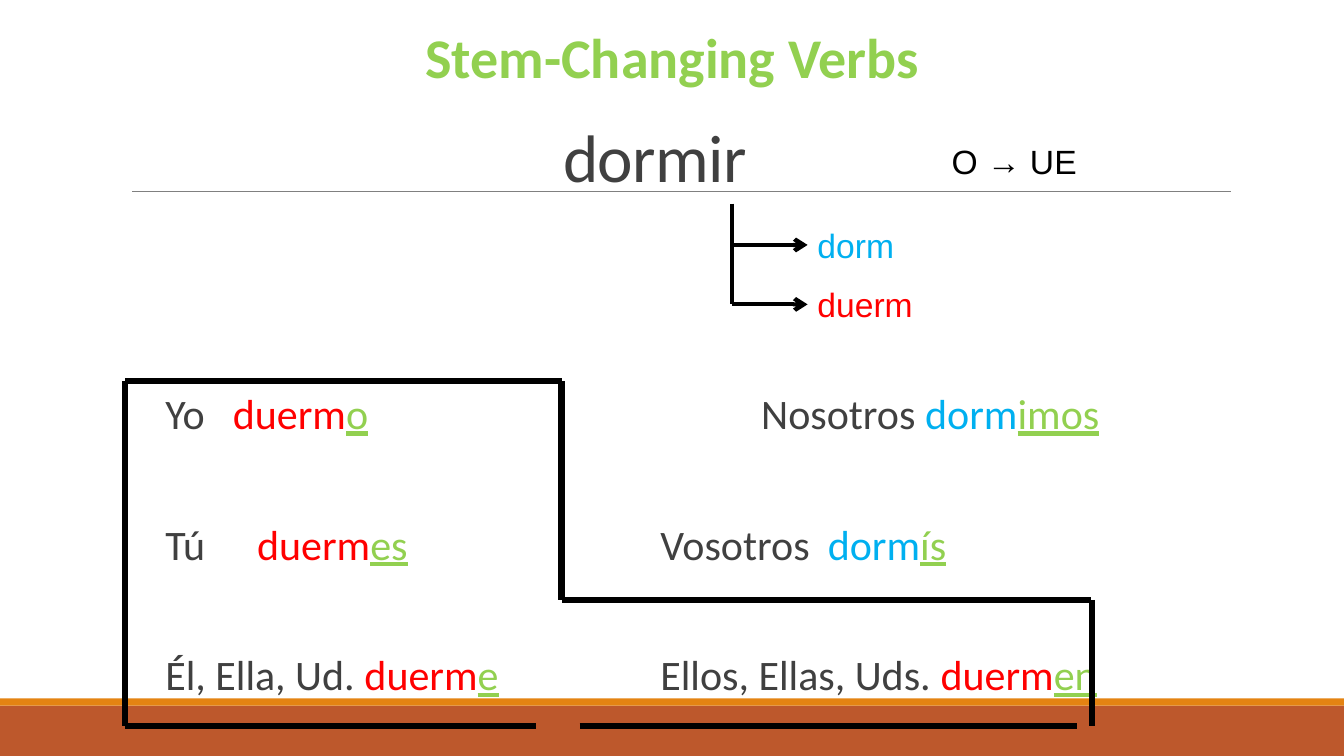
import pptx
import pptx.util
import pptx.dml.color
import pptx.enum.shapes
import pptx.enum.text
from dataclasses import dataclass
from lxml import etree

PX = 9144  # EMU in one px, 100 px to the inch
ALIGN = pptx.enum.text.PP_ALIGN
ANCHOR = pptx.enum.text.MSO_ANCHOR
KINDS = pptx.enum.shapes


@dataclass(frozen=True)
class Theme:
    black: str = "000000"
    grey: str = "404040"
    rule: str = "808080"
    red: str = "FF0000"
    blue: str = "00B0F0"
    green: str = "92D050"
    rust: str = "BD582C"
    amber: str = "E48312"
    head: str = "Calibri"
    note: str = "Arial"
    verb: int = 48
    title: int = 40
    body: int = 30
    small: int = 24


def tone(code):
    return pptx.dml.color.RGBColor.from_string(code)


def apply(thing, form):
    for name, value in form.items():
        setattr(thing, name, value)


class Page:
    def __init__(self, deck, theme):
        self.theme = theme
        self.slide = deck.slides.add_slide(deck.slide_layouts[6])
        self.shapes = self.slide.shapes

    def band(self, top, high, fill):
        box = self.shapes.add_shape(
            KINDS.MSO_SHAPE.RECTANGLE, 0, top * PX, 1333 * PX, high * PX)
        box.shadow.inherit = False
        box.fill.solid()
        box.fill.fore_color.rgb = tone(fill)
        box.line.fill.background()

    def line(self, start, end, width, color=None, arrow=False):
        line = self.shapes.add_connector(
            KINDS.MSO_CONNECTOR.STRAIGHT, *[n * PX for n in (*start, *end)])
        line.line.width = pptx.util.Pt(width)
        line.line.color.rgb = tone(color or self.theme.black)
        if arrow:
            tail = pptx.oxml.ns.qn("a:tailEnd")
            etree.SubElement(line.line._get_or_add_ln(), tail, type="arrow")
        props = line._element.spPr
        etree.SubElement(props, pptx.oxml.ns.qn("a:effectLst"))

    def text(self, area, rows, size, face, frame=None, para=None, bold=False, gap=0):
        """Each row is a list of (text, color, underline) and a list of tab stops."""
        box = self.shapes.add_textbox(*[n * PX for n in area])
        body = box.text_frame
        apply(body, {"word_wrap": True, **(frame or {})})
        for i, (runs, stops) in enumerate(rows):
            item = body.add_paragraph() if i else body.paragraphs[0]
            apply(item, para or {})
            if stops:
                tabs = etree.SubElement(
                    item._p.get_or_add_pPr(), pptx.oxml.ns.qn("a:tabLst"))
                for stop in stops:
                    etree.SubElement(tabs, pptx.oxml.ns.qn("a:tab"),
                                     pos=str(stop * PX), algn="l")
            for words, color, under in runs:
                run = item.add_run()
                run.text = words
                apply(run.font, {"size": pptx.util.Pt(size), "name": face,
                                 "bold": bold, "underline": under})
                run.font.color.rgb = tone(color)
                if gap:
                    run._r.get_or_add_rPr().set("spc", str(gap))

    def label(self, area, words, color, size, face, **form):
        self.text(area, [([(words, color, False)], [])], size, face, **form)


def main():
    deck = pptx.Presentation()
    apply(deck, {"slide_width": 1333 * PX, "slide_height": 750 * PX})
    look = Theme()
    page = Page(deck, look)

    # Footer bands and rule
    page.band(700, 50, look.rust)
    page.band(693, 7, look.amber)
    page.line((131, 190), (1221, 190), 0.5, look.rule)

    # Infinitive
    page.label((549, 105, 383, 95), "dormir", look.grey, look.verb, look.head,
               frame={"vertical_anchor": ANCHOR.BOTTOM},
               para={"line_spacing": 0.85}, gap=-50)

    # Conjugations: pronoun, stem, ending for each half of a row
    red, blue = look.red, look.blue
    verbs = [
        (("Yo\t", "duerm", red, "o"),
         ("\tNosotros ", "dorm", blue, "imos"), [67, 591]),
        (("Tú\t", "duerm", red, "es"),
         ("\tVosotros\t", "dorm", blue, "ís"), [91, 491, 657]),
        (("Él, Ella, Ud. ", "duerm", red, "e"),
         ("\tEllos, Ellas, Uds. ", "duerm", red, "en"), [491]),
    ]
    rows = []
    for left, right, stops in verbs:
        runs = []
        for who, stem, color, end in (left, right):
            runs += [(who, look.grey, False), (stem, color, False),
                     (end, look.green, True)]
        rows.append((runs, stops))
    page.text((145, 385, 1000, 403), rows, look.body, look.head,
              frame={"margin_left": 19 * PX, "margin_right": 0},
              para={"line_spacing": 0.9, "space_before": pptx.util.Pt(12),
                    "space_after": pptx.util.Pt(49)})

    # Stem branches
    page.line((726, 202), (726, 302), 3)
    stems = [("dorm", blue, 243, 250), ("duerm", red, 302, 116)]
    for stem, color, y, wide in stems:
        page.line((726, y), (801, y), 3, arrow=True)
        page.label((801, y - 25, wide, 51), stem, color, look.small, look.note,
                   frame={"word_wrap": False})

    # Boot outline
    boot = [
        ((124, 378), (557, 378)), ((557, 378), (557, 595)),
        ((557, 595), (1082, 595)), ((124, 720), (532, 720)),
        ((575, 720), (1000, 720)), ((652, 720), (1068, 720)),
        ((1083, 595), (1083, 720)), ((124, 378), (124, 720)),
    ]
    for start, end in boot:
        page.line(start, end, 4.5)

    # Vowel change and heading
    page.label((934, 135, 150, 51), "O → UE", look.black, look.small, look.note)
    page.label((225, 17, 883, 77), "Stem-Changing Verbs", look.green, look.title,
               look.head, para={"alignment": ALIGN.CENTER}, bold=True)

    deck.save("out.pptx")


if __name__ == "__main__":
    main()
